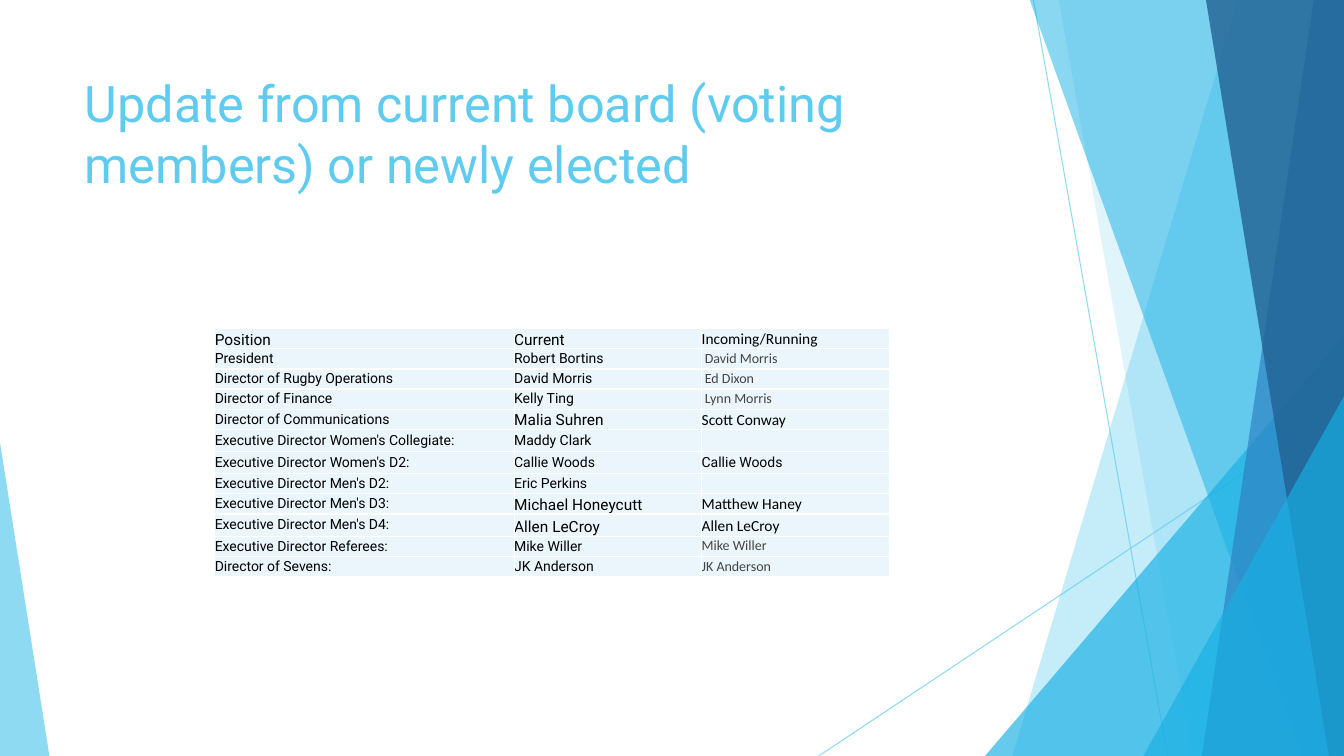
"""Build the board update slide with its table of current and incoming members."""
from pptx import Presentation
from pptx.dml.color import RGBColor
from pptx.enum import shapes, text
from pptx.oxml import xmlchemy
from pptx.util import Inches, Pt


def add_child(parent, tag, **attributes):
    child = xmlchemy.OxmlElement(tag)
    for name, value in attributes.items():
        child.set(name, str(value))
    parent.append(child)
    return child


def paint(fill, color, opacity=100):
    fill.solid()
    fill.fore_color.rgb = RGBColor.from_string(color)
    if opacity < 100:
        add_child(fill._xPr.find(".//" + xmlchemy.qn("a:srgbClr")), "a:alpha", val=opacity * 1000)


presentation = Presentation()
presentation.slide_width = Inches(13.33)
presentation.slide_height = Inches(7.5)
slide = presentation.slides.add_slide(presentation.slide_layouts[5])

for start_x, start_y, end_x in [(10.25, 0, 11.58), (13.33, 4.03, 8.12)]:
    line = slide.shapes.add_connector(
        shapes.MSO_CONNECTOR.STRAIGHT, Inches(start_x), Inches(start_y), Inches(end_x), Inches(7.5))
    line.line.width = Pt(0.75)
    paint(line.line.fill, "5FCBEF", 70)
    add_child(line._element.spPr, "a:effectLst")

TRIANGLE = "triangle"
BAND = "band"
facets = [
    (BAND, (12.28, 13.33, 13.33, 10.04), "5FCBEF", 36),
    (BAND, (10.5, 13.33, 13.33, 11.83), "5FCBEF", 20),
    (TRIANGLE, (9.77, 3.33, 3.56, 4.17, 1), "17B0E4", 66),
    (BAND, (10.21, 13.33, 13.33, 12.91), "17B0E4", 50),
    (BAND, (13.03, 13.33, 13.33, 11.92), "2E83C3", 70),
    (BAND, (11.96, 13.33, 13.33, 13.18), "226292", 80),
    (TRIANGLE, (11.34, 3.93, 1.99, 3.57, 1), "17B0E4", 66),
    (TRIANGLE, (0, 4.39, 0.49, 3.11, 0), "5FCBEF", 70),
]
for kind, numbers, color, opacity in facets:
    if kind == BAND:
        corners = [(Inches(x), Inches(y)) for x, y in zip(numbers, (-0.01, -0.01, 7.5, 7.5))]
        builder = slide.shapes.build_freeform(*corners[0])
        builder.add_line_segments(corners[1:], close=True)
        shape = builder.convert_to_shape()
    else:
        *box, apex = numbers
        shape = slide.shapes.add_shape(
            shapes.MSO_SHAPE.ISOSCELES_TRIANGLE, *[Inches(length) for length in box])
        shape.adjustments[0] = apex
    shape.shadow.inherit = False
    shape.line.fill.background()
    paint(shape.fill, color, opacity)

title = slide.shapes.title
title.left, title.top, title.width, title.height = [Inches(n) for n in (0.74, 0.67, 9.4, 1.44)]
title.text_frame.text = "Update from current board (voting members) or newly elected"
title.text_frame.vertical_anchor = text.MSO_ANCHOR.TOP
title.text_frame.word_wrap = True
paragraph = title.text_frame.paragraphs[0]
paragraph.alignment = text.PP_ALIGN.LEFT
paragraph.font.name = "Roboto"
paragraph.font.size = Pt(36)
paragraph.font.color.rgb = RGBColor.from_string("5FCBEF")

LARGE = ("Roboto", 11, "000000")
NORMAL = ("Roboto", 10, "000000")
LARGE_CALIBRI = ("Calibri", 11, "000000")
GRAY_CALIBRI = ("Calibri", 10, "444444")
header = (LARGE, LARGE, LARGE_CALIBRI)
gray = (NORMAL, NORMAL, GRAY_CALIBRI)
plain = (NORMAL, NORMAL, NORMAL)
changed = (NORMAL, LARGE, LARGE_CALIBRI)
members = [
    (0.2, header, "Position", "Current", "Incoming/Running"),
    (0.2, gray, "President", "Robert Bortins", " David Morris"),
    (0.2, gray, "Director of Rugby Operations", "David Morris", " Ed Dixon"),
    (0.2, gray, "Director of Finance", "Kelly Ting", " Lynn Morris"),
    (0.2, changed, "Director of Communications", "Malia Suhren", "Scott Conway"),
    (0.22, plain, "Executive Director Women's Collegiate:", "Maddy Clark", ""),
    (0.22, plain, "Executive Director Women's D2:", "Callie Woods", "Callie Woods"),
    (0.2, plain, "Executive Director Men's D2:", "Eric Perkins", ""),
    (0.2, changed, "Executive Director Men's D3:", "Michael Honeycutt", "Matthew Haney"),
    (0.22, changed, "Executive Director Men's D4:", "Allen LeCroy", "Allen LeCroy"),
    (0.2, gray, "Executive Director Referees:", "Mike Willer", "Mike Willer"),
    (0.2, gray, "Director of Sevens:", "JK Anderson", "JK Anderson"),
]
table = slide.shapes.add_table(
    len(members), 3, Inches(2.13), Inches(3.26), Inches(6.69), Inches(2.45)).table
table.first_row = False
table.horz_banding = False
for column, width in zip(table.columns, (2.97, 1.86, 1.86)):
    column.width = Inches(width)

for row, (height, styles, *names) in zip(table.rows, members):
    row.height = Inches(height)
    for cell, name, (font_name, size, color) in zip(row.cells, names, styles):
        cell.margin_left = cell.margin_right = cell.margin_top = cell.margin_bottom = 0
        cell.vertical_anchor = text.MSO_ANCHOR.BOTTOM if size == 11 else text.MSO_ANCHOR.MIDDLE
        cell.text = name
        paragraph = cell.text_frame.paragraphs[0]
        paragraph.font.name = font_name
        paragraph.font.size = Pt(size)
        paragraph.font.color.rgb = RGBColor.from_string(color)
        add_child(paragraph._p, "a:endParaRPr", sz=size * 100)
        properties = cell._tc.get_or_add_tcPr()
        for side in "LRTB":
            border = add_child(properties, "a:ln" + side, w=Pt(1))
            add_child(add_child(border, "a:solidFill"), "a:srgbClr", val="FFFFFF")
        paint(cell.fill, "EAF6FC")

presentation.save("out.pptx")
